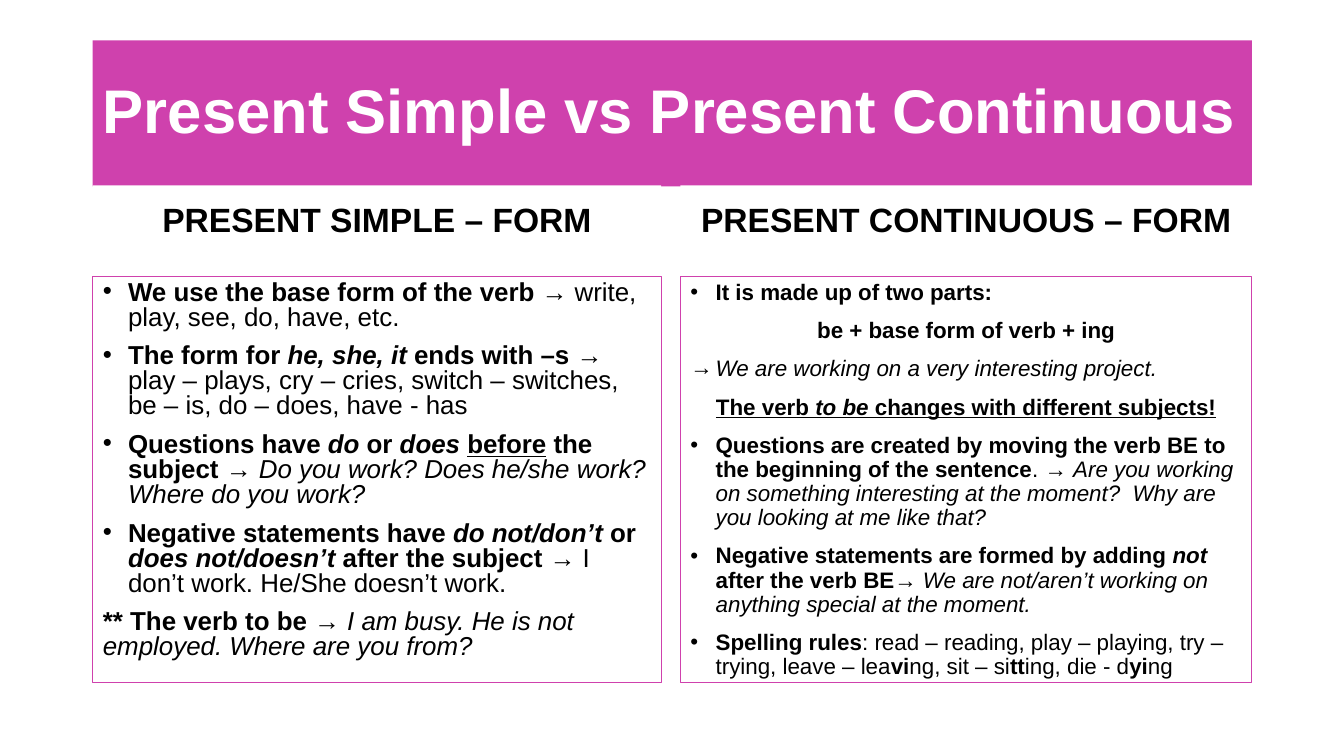
from lxml import etree
from pptx import Presentation
from pptx.dml.color import RGBColor
from pptx.enum.text import MSO_ANCHOR, MSO_AUTO_SIZE, PP_ALIGN
from pptx.oxml.ns import qn
from pptx.util import Pt

LEFT, CENTER = PP_ALIGN.LEFT, PP_ALIGN.CENTER
TOP, MIDDLE = MSO_ANCHOR.TOP, MSO_ANCHOR.MIDDLE
NO_FIT = MSO_AUTO_SIZE.NONE
COMPARISON_LAYOUT = 4
PINK, WHITE, BLACK = "CF41AD", "FFFFFF", "000000"
FONT = "Arial"
HEADING_TOP, HEADING_HEIGHT = 132.48, 64.8
LIST_TOP, LIST_HEIGHT = 197.28, 290.16

SIMPLE_FORM = [
    ("•", LEFT, [("We use the base form of the verb ", "b"),
                 ("→ write, play, see, do, have, etc.", "")]),
    ("•", LEFT, [("The form for ", "b"), ("he, she, it ", "bi"),
                 ("ends with –s ", "b"),
                 ("→ play – plays, cry – cries, switch – switches, "
                  "be – is, do – does, have - has", "")]),
    ("•", LEFT, [("Questions have ", "b"), ("do", "bi"), (" or ", "b"),
                 ("does ", "bi"), ("before", "bu"), (" the subject ", "b"),
                 ("→ ", ""),
                 ("Do you work? Does he/she work? Where do you work?", "i")]),
    ("•", LEFT, [("Negative statements have ", "b"), ("do not/don’t ", "bi"),
                 ("or ", "b"), ("does not/doesn’t ", "bi"),
                 ("after the subject ", "b"),
                 ("→ I don’t work. He/She doesn’t work.", "")]),
    (None, LEFT, [("** The verb to be ", "b"),
                  ("→ I am busy. He is not employed. Where are you from?", "i")]),
]
CONTINUOUS_FORM = [
    ("•", LEFT, [("It is made up of two parts:", "b")]),
    (None, CENTER, [("be + base form of verb + ing", "b")]),
    ("→", LEFT, [("We are working on a very interesting project.", "i")]),
    (None, CENTER, [("The verb ", "bu"), ("to be ", "biu"),
                    ("changes with different subjects!", "bu")]),
    ("•", LEFT, [("Questions are created by moving the verb BE to "
                  "the beginning of the sentence", "b"), (". → ", ""),
                 ("Are you working on something interesting at the moment?  "
                  "Why are you looking at me like that?", "i")]),
    ("•", LEFT, [("Negative statements are formed by adding ", "b"),
                 ("not", "bi"), (" after the verb BE", "b"),
                 ("→ We are not/aren’t working on anything special "
                  "at the moment.", "i")]),
    ("•", LEFT, [("Spelling rules", "b"),
                 (": read – reading, play – playing, try –trying, "
                  "leave – lea", ""), ("vi", "b"), ("ng, sit – si", ""),
                 ("tt", "b"), ("ing, die - d", ""), ("yi", "b"), ("ng", "")]),
]


def color(value):
    """Return the colour for a hex string."""
    return RGBColor.from_string(value)


def place(box, left, top, width, height, fill=None, line=None, anchor=TOP):
    """Position and format a placeholder and return its text frame."""
    box.left, box.top, box.width, box.height = map(Pt, (left, top, width, height))
    if fill:
        box.fill.solid()
        box.fill.fore_color.rgb = color(fill)
    if line:
        box.line.color.rgb = color(line)
        box.line.width = Pt(0.75)
    frame = box.text_frame
    frame.word_wrap = True
    frame.auto_size = NO_FIT
    frame.vertical_anchor = anchor
    return frame


def set_bullet(para, bullet):
    """Give a paragraph a hanging bullet, or none."""
    properties = para._p.get_or_add_pPr()
    indent = Pt(18) if bullet else 0
    properties.set("marL", str(indent))
    properties.set("indent", str(-indent))
    if bullet:
        etree.SubElement(properties, qn("a:buFont"), typeface=FONT)
        etree.SubElement(properties, qn("a:buChar"), char=bullet)
    else:
        etree.SubElement(properties, qn("a:buNone"))


def add_span(para, text, size, style="b", ink=BLACK):
    """Add a run of text whose style letters mean bold, italic and underline."""
    span = para.add_run()
    span.text = text
    font = span.font
    font.name, font.size = FONT, Pt(size)
    font.bold, font.italic, font.underline = (mark in style for mark in "biu")
    font.color.rgb = color(ink)


def fill_line(frame, text, size, spacing, align, ink=BLACK):
    """Write one bold line into a text frame."""
    para = frame.paragraphs[0]
    para.alignment, para.line_spacing, para.space_before = align, spacing, Pt(0)
    add_span(para, text, size, ink=ink)


def fill_list(frame, paragraphs, size, spacing):
    """Write the grammar points into a text frame."""
    for number, (bullet, align, spans) in enumerate(paragraphs):
        para = frame.add_paragraph() if number else frame.paragraphs[0]
        para.alignment, para.line_spacing = align, spacing
        para.space_before = Pt(10 if number else 0)
        set_bullet(para, bullet)
        for text, style in spans:
            add_span(para, text, size, style)


def add_column(heading_box, list_box, left, width, heading, paragraphs, size, spacing):
    """Fill one side of the comparison."""
    frame = place(heading_box, left, HEADING_TOP, width, HEADING_HEIGHT,
                  fill=WHITE, anchor=MIDDLE)
    frame.margin_top, frame.margin_bottom = Pt(0), Pt(12)
    fill_line(frame, heading, 24, 0.8, CENTER)
    frame = place(list_box, left, LIST_TOP, width, LIST_HEIGHT, line=PINK)
    fill_list(frame, paragraphs, size, spacing)


def main():
    """Build the slide and save the deck."""
    deck = Presentation()
    deck.slide_width, deck.slide_height = Pt(960), Pt(540)
    page = deck.slides.add_slide(deck.slide_layouts[COMPARISON_LAYOUT])
    title, *boxes = list(page.placeholders)[:5]
    frame = place(title, 66.24, 28.8, 828, 104.4, fill=PINK, anchor=MIDDLE)
    fill_line(frame, "Present Simple vs Present Continuous", 44, 0.9, LEFT, WHITE)
    add_column(*boxes[:2], 66.24, 406.08, "PRESENT SIMPLE – FORM",
               SIMPLE_FORM, 18.5, 0.8)
    add_column(*boxes[2:], 486, 408.24, "PRESENT CONTINUOUS – FORM",
               CONTINUOUS_FORM, 16, 0.9)
    deck.save("out.pptx")


if __name__ == "__main__":
    main()
